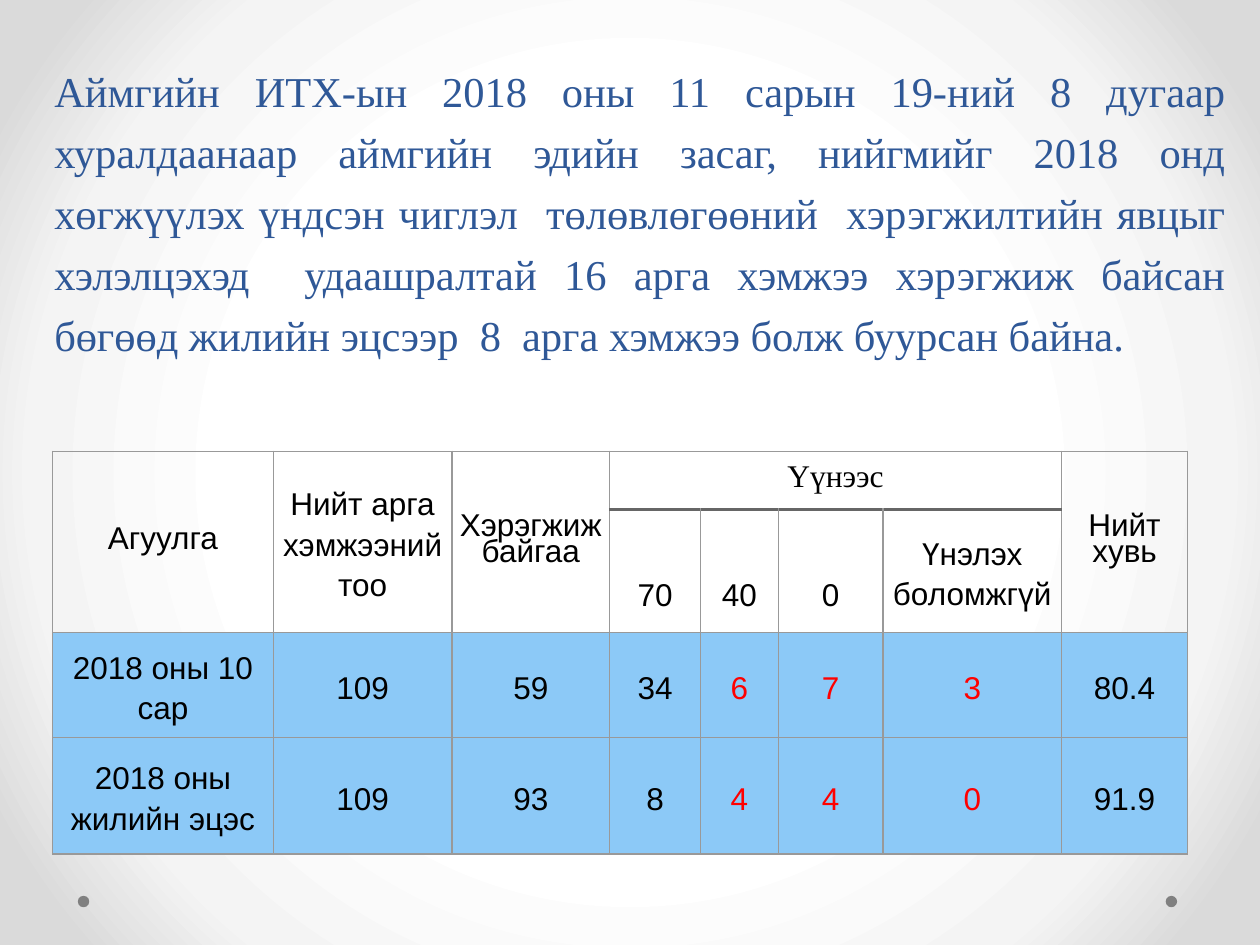
import pptx
import pptx.dml.color
import pptx.enum.shapes
import pptx.enum.text
import pptx.oxml
import pptx.util
from pptx.util import Cm

A_NS = 'xmlns:a="http://schemas.openxmlformats.org/drawingml/2006/main"'


def colour(hex_code):
    return pptx.dml.color.RGBColor.from_string(hex_code)


def write(frame, text, font="Arial", size=18, ink="000000", align="CENTER", spacing=1.15, after=0):
    paragraph = frame.paragraphs[0]
    paragraph.alignment = getattr(pptx.enum.text.PP_ALIGN, align)
    paragraph.line_spacing = spacing
    paragraph.space_before = pptx.util.Pt(0)
    paragraph.space_after = pptx.util.Pt(after)
    run = paragraph.add_run()
    run.text = text
    run.font.name = font
    run.font.size = pptx.util.Pt(size)
    run.font.color.rgb = colour(ink)


deck = pptx.Presentation()
deck.slide_width, deck.slide_height = Cm(25.4), Cm(19.05)
slide = deck.slides.add_slide(deck.slide_layouts[5])

backdrop = slide.background.fill
backdrop.gradient()
stops = "".join(
    f'<a:gs pos="{percent * 1000}"><a:srgbClr val="{shade}"/></a:gs>'
    for percent, shade in ((50, "FFFFFF"), (76, "F4F4F4"), (92, "DADADA"))
)
gradient = slide.background._cSld.bg.bgPr.find(pptx.oxml.ns.qn("a:gradFill"))
for child in list(gradient):
    gradient.remove(child)
gradient.append(pptx.oxml.parse_xml(f"<a:gsLst {A_NS}>{stops}</a:gsLst>"))
gradient.append(pptx.oxml.parse_xml(
    f'<a:path {A_NS} path="circle"><a:fillToRect l="50000" t="50000" r="50000" b="50000"/></a:path>'))

for dot_left in (1.57, 23.5):
    dot = slide.shapes.add_shape(
        pptx.enum.shapes.MSO_SHAPE.OVAL, Cm(dot_left), Cm(18.06), Cm(0.23), Cm(0.23))
    dot.shadow.inherit = False
    dot.fill.solid()
    dot.fill.fore_color.rgb = colour("808080")
    dot.line.fill.background()

summary = slide.shapes.title
summary.left, summary.top, summary.width, summary.height = Cm(0.84), Cm(0.84), Cm(24.13), Cm(6.55)
summary.text_frame.word_wrap = True
summary.text_frame.auto_size = pptx.enum.text.MSO_AUTO_SIZE.NONE
summary.text_frame.vertical_anchor = pptx.enum.text.MSO_ANCHOR.BOTTOM
write(
    summary.text_frame,
    "Аймгийн ИТХ-ын 2018 оны 11 сарын 19-ний 8 дугаар хуралдаанаар аймгийн эдийн засаг, "
    "нийгмийг 2018 онд хөгжүүлэх үндсэн чиглэл  төлөвлөгөөний  хэрэгжилтийн явцыг хэлэлцэхэд  "
    "удаашралтай 16 арга хэмжээ хэрэгжиж байсан бөгөөд жилийн эцсээр  8  арга хэмжээ болж "
    "буурсан байна.",
    font="Times New Roman", size=24.3, ink="2F5897", align="JUSTIFY", spacing=1.2,
)

contents = [
    ["Агуулга", "Нийт арга хэмжээний тоо", "Хэрэгжиж байгаа", "Үүнээс", "", "", "", "Нийт хувь"],
    ["", "", "", "70", "40", "0", "Үнэлэх боломжгүй", ""],
    ["2018 оны 10 сар", "109", "59", "34", "6", "7", "3", "80.4"],
    ["2018 оны жилийн эцэс", "109", "93", "8", "4", "4", "0", "91.9"],
]
column_widths = [4.45, 3.6, 3.18, 1.83, 1.57, 2.11, 3.6, 2.54]
row_heights = [1.17, 2.47, 2.12, 2.34]
progress = slide.shapes.add_table(
    4, 8, Cm(1.06), Cm(9.1), Cm(sum(column_widths)), Cm(sum(row_heights))).table
progress.first_row = progress.horz_banding = False
for column, width in zip(progress.columns, column_widths):
    column.width = Cm(width)
for row, height in zip(progress.rows, row_heights):
    row.height = Cm(height)

for col in (0, 1, 2, 7):
    progress.cell(0, col).merge(progress.cell(1, col))
progress.cell(0, 3).merge(progress.cell(0, 6))

for r, labels in enumerate(contents):
    for c, label in enumerate(labels):
        cell = progress.cell(r, c)
        side = 0.18 if r > 1 and c > 0 else 0.15
        cell.margin_left = cell.margin_right = Cm(side)
        cell.margin_top, cell.margin_bottom = Cm(0.03), Cm(0)
        cell.vertical_anchor = pptx.enum.text.MSO_ANCHOR.MIDDLE
        if r > 1:
            cell.fill.solid()
            cell.fill.fore_color.rgb = colour("8CC9F7")
        else:
            cell.fill.background()
        if r == 1 and c in (3, 4, 5):
            cell.vertical_anchor = pptx.enum.text.MSO_ANCHOR.BOTTOM
            cell.margin_bottom = Cm(0.4)
        if label:
            write(
                cell.text_frame, label,
                font="Times New Roman" if label == "Үүнээс" else "Arial",
                ink="FF0000" if r > 1 and c in (4, 5, 6) else "000000",
                spacing=pptx.util.Pt(15.1) if r == 0 and c != 1 else 1.15,
                after=10 if r == 3 and c > 0 else 0,
            )
        properties = cell._tc.get_or_add_tcPr()
        for position, edge in enumerate("LRTB"):
            under_group = 3 <= c <= 6 and (r, edge) in ((0, "B"), (1, "T"))
            points, shade = (1.5, "666666") if under_group else (1, "999999")
            properties.insert(position, pptx.oxml.parse_xml(
                f'<a:ln{edge} {A_NS} w="{pptx.util.Pt(points)}"><a:solidFill>'
                f'<a:srgbClr val="{shade}"/></a:solidFill></a:ln{edge}>'))

deck.save("out.pptx")
